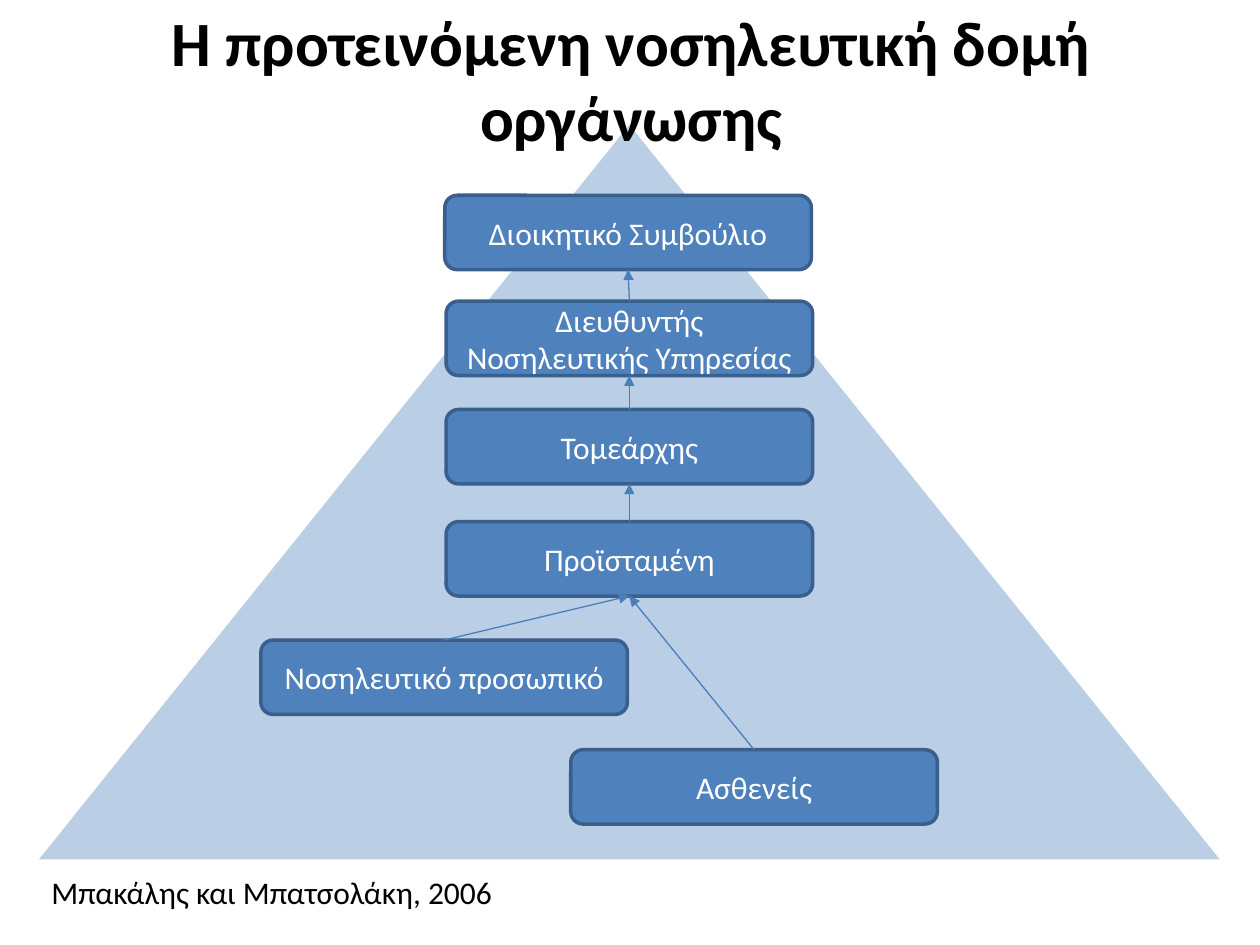
import pptx
import pptx.util
import pptx.dml.color
import pptx.enum.shapes
import pptx.enum.text
import pptx.oxml
import pptx.oxml.ns
from pptx.util import Inches

MSO_SHAPE = pptx.enum.shapes.MSO_SHAPE
ANCHOR = pptx.enum.text.MSO_ANCHOR
ALIGN = pptx.enum.text.PP_ALIGN
NS = pptx.oxml.ns.nsdecls("a")
BLUE = "4F81BD"


def color(value):
    return pptx.dml.color.RGBColor.from_string(value)


def write(sp, text, size, font_color, align, anchor, bold=False, wrap=True):
    tf = sp.text_frame
    tf.word_wrap = wrap
    tf.vertical_anchor = anchor
    p = tf.paragraphs[0]
    p.alignment = align
    r = p.add_run()
    r.text = text
    r.font.name = "Calibri"
    r.font.size = pptx.util.Pt(size)
    r.font.bold = bold
    r.font.color.rgb = color(font_color)


prs = pptx.Presentation()
prs.slide_width, prs.slide_height = Inches(10), Inches(7.5)
s = prs.slides.add_slide(prs.slide_layouts[6])

# Pyramid behind the hierarchy
pyramid = s.shapes.add_shape(MSO_SHAPE.ISOSCELES_TRIANGLE, Inches(0.31), Inches(0.99),
                             Inches(9.37), Inches(5.83))
pyramid.shadow.inherit = False
pyramid.fill.solid()
pyramid.fill.fore_color.rgb = color(BLUE)
pyramid.line.fill.background()
fill_color = pyramid.fill._xPr.find(".//" + pptx.oxml.ns.qn("a:srgbClr"))
fill_color.append(pptx.oxml.parse_xml(f'<a:alpha {NS} val="39000"/>'))

title = s.shapes.add_textbox(Inches(0.51), Inches(0.13), Inches(9), Inches(0.99))
write(title, "Η προτεινόμενη νοσηλευτική δομή οργάνωσης", 36, "000000",
      ALIGN.CENTER, ANCHOR.MIDDLE, bold=True)

# Roles: key, label, left, top
roles = [
    ("board", "Διοικητικό Συμβούλιο", 3.53, 1.55),
    ("director", "Διευθυντής Νοσηλευτικής Υπηρεσίας", 3.54, 2.39),
    ("sector", "Τομεάρχης", 3.54, 3.25),
    ("head", "Προϊσταμένη", 3.54, 4.14),
    ("staff", "Νοσηλευτικό προσωπικό", 2.07, 5.08),
    ("patients", "Ασθενείς", 4.53, 5.95),
]
boxes = {}
for key, label, left, top in roles:
    sp = s.shapes.add_shape(MSO_SHAPE.ROUNDED_RECTANGLE, Inches(left), Inches(top),
                            Inches(2.91), Inches(0.59))
    sp.shadow.inherit = False
    sp.fill.solid()
    sp.fill.fore_color.rgb = color(BLUE)
    sp.line.color.rgb = color("3A5F8C")
    sp.line.width = pptx.util.Pt(2)
    write(sp, label, 18, "FFFFFF", ALIGN.CENTER, ANCHOR.MIDDLE)
    boxes[key] = sp

# Each role reports upwards: top of the lower box to bottom of the upper one
reports = [("staff", "head"), ("patients", "head"), ("head", "sector"),
           ("sector", "director"), ("director", "board")]
for lower, upper in reports:
    arrow = s.shapes.add_connector(pptx.enum.shapes.MSO_CONNECTOR.STRAIGHT, 0, 0, 0, 0)
    arrow.begin_connect(boxes[lower], 0)
    arrow.end_connect(boxes[upper], 2)
    arrow.line.color.rgb = color("4B7EBC")
    arrow.line.width = pptx.util.Pt(0.75)
    arrow.line._get_or_add_ln().append(
        pptx.oxml.parse_xml(f'<a:tailEnd {NS} type="triangle"/>'))
    arrow._element.spPr.append(pptx.oxml.parse_xml(f"<a:effectLst {NS}/>"))

citation = s.shapes.add_textbox(Inches(0.31), Inches(6.88), Inches(3.74), Inches(0.4))
write(citation, "Μπακάλης και Μπατσολάκη, 2006", 18, "000000",
      ALIGN.LEFT, ANCHOR.TOP, wrap=False)
citation.text_frame.auto_size = pptx.enum.text.MSO_AUTO_SIZE.SHAPE_TO_FIT_TEXT

prs.save("out.pptx")
